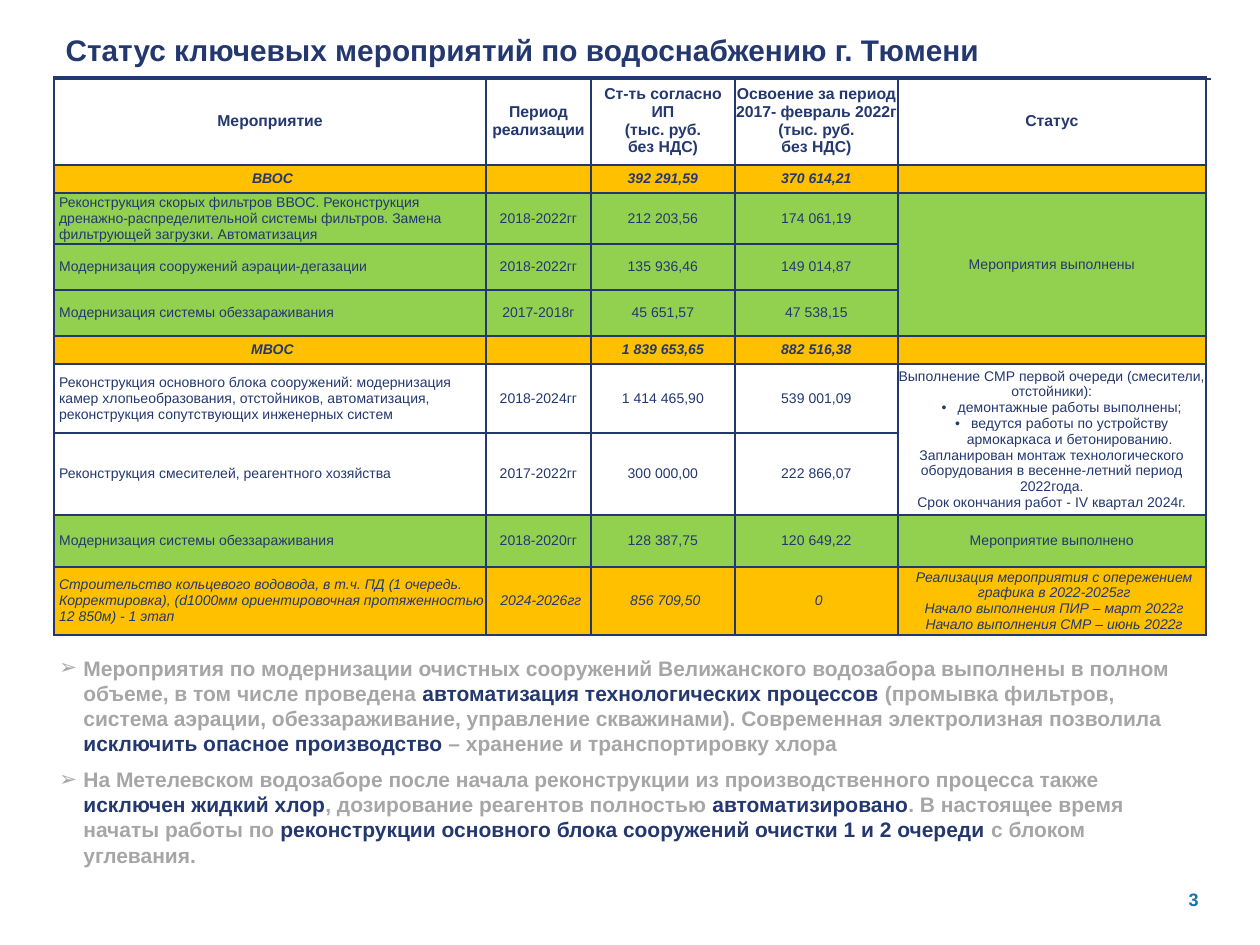
"""Build the slide on the status of key water supply measures in Tyumen."""
from lxml.etree import SubElement
from pptx import Presentation
from pptx.dml.color import RGBColor
from pptx.enum.shapes import MSO_CONNECTOR
from pptx.enum.text import MSO_ANCHOR, MSO_AUTO_SIZE, PP_ALIGN
from pptx.oxml import parse_xml
from pptx.oxml.ns import nsdecls, qn
from pptx.util import Emu, Pt

NAVY = RGBColor(0x24, 0x38, 0x70)
RULE_NAVY = RGBColor(0x23, 0x37, 0x72)
BLUE = RGBColor(0x10, 0x74, 0xB9)
GREY = RGBColor(0xA6, 0xA6, 0xA6)
GREEN = RGBColor(0x92, 0xD0, 0x50)
AMBER = RGBColor(0xFF, 0xC0, 0x00)
PX = 914400 / 126


def px(*lengths):
    return [Emu(round(length * PX)) for length in lengths]


def format_paragraph(paragraph, size, color, bold=False, italic=False, left=0, hang=0, bullet=None):
    properties = paragraph._p.get_or_add_pPr()
    margin, indent = px(left, -hang)
    properties.set("marL", str(margin))
    properties.set("indent", str(indent))
    if bullet:
        SubElement(properties, qn("a:buFont")).set("typeface", "Arial")
        SubElement(properties, qn("a:buChar")).set("char", bullet)
    font = paragraph.font
    font.name, font.size, font.bold, font.italic = "Arial", Pt(size), bold, italic
    font.color.rgb = color


prs = Presentation()
prs.slide_width, prs.slide_height = px(1260, 945)
slide = prs.slides.add_slide(prs.slide_layouts[5])
shapes = slide.shapes

heading = shapes.title
heading.left, heading.top, heading.width, heading.height = px(53, 29, 1067, 50)
heading_frame = heading.text_frame
heading_frame.text = "Статус ключевых мероприятий по водоснабжению г. Тюмени"
heading_frame.auto_size = MSO_AUTO_SIZE.NONE
heading_frame.vertical_anchor = MSO_ANCHOR.TOP
heading_line = heading_frame.paragraphs[0]
heading_line.alignment = PP_ALIGN.LEFT
heading_line.line_spacing = 0.9
format_paragraph(heading_line, 17, NAVY, bold=True)

rule = shapes.add_connector(MSO_CONNECTOR.STRAIGHT, *px(1211, 79, 53, 79))
rule.line.color.rgb = RULE_NAVY
rule.line.width = Pt(1.5)
SubElement(rule._element.spPr, qn("a:effectLst"))

page_box = shapes.add_textbox(*px(1120, 877, 91, 45))
page_box.text_frame.text = "3"
page_box.text_frame.word_wrap = True
page_box.text_frame.vertical_anchor = MSO_ANCHOR.MIDDLE
page_line = page_box.text_frame.paragraphs[0]
page_line.alignment = PP_ALIGN.RIGHT
format_paragraph(page_line, 10.3, BLUE, bold=True)

COLUMN_WIDTHS = [432, 105, 144, 163, 308]
HEAD = dict(size=9, bold=True)
GROUP = dict(size=8, bold=True, italic=True)
BODY = dict(size=8)
PLANNED = dict(size=8, italic=True)
MEASURES = [
    (88, None, HEAD, ["Мероприятие", "Период реализации", "Ст-ть согласно ИП\n(тыс. руб.\nбез НДС)",
                      "Освоение за период 2017- февраль 2022г (тыс. руб.\nбез НДС)", "Статус"]),
    (28, AMBER, GROUP, ["ВВОС", "", "392 291,59", "370 614,21", ""]),
    (51, GREEN, BODY, ["Реконструкция скорых фильтров ВВОС. Реконструкция дренажно-распределительной "
                       "системы фильтров. Замена фильтрующей загрузки. Автоматизация",
                       "2018-2022гг", "212 203,56", "174 061,19", "Мероприятия выполнены"]),
    (46, GREEN, BODY, ["Модернизация сооружений аэрации-дегазации",
                       "2018-2022гг", "135 936,46", "149 014,87", ""]),
    (46, GREEN, BODY, ["Модернизация системы обеззараживания",
                       "2017-2018г", "45 651,57", "47 538,15", ""]),
    (28, AMBER, GROUP, ["МВОС", "", "1 839 653,65", "882 516,38", ""]),
    (69, None, BODY, ["Реконструкция основного блока сооружений: модернизация камер хлопьеобразования, "
                      "отстойников, автоматизация, реконструкция сопутствующих инженерных систем",
                      "2018-2024гг", "1 414 465,90", "539 001,09",
                      "Выполнение СМР первой очереди (смесители, отстойники):\n"
                      "•демонтажные работы выполнены;\n"
                      "•ведутся работы по устройству армокаркаса и бетонированию.\n"
                      "Запланирован монтаж технологического оборудования в весенне-летний период 2022года.\n"
                      "Срок окончания работ - IV квартал 2024г."]),
    (82, None, BODY, ["Реконструкция смесителей, реагентного хозяйства",
                      "2017-2022гг", "300 000,00", "222 866,07", ""]),
    (52, GREEN, BODY, ["Модернизация системы обеззараживания",
                       "2018-2020гг", "128 387,75", "120 649,22", "Мероприятие выполнено"]),
    (68, AMBER, PLANNED, ["Строительство кольцевого водовода, в т.ч. ПД (1 очередь. Корректировка), "
                          "(d1000мм ориентировочная протяженностью 12 850м) - 1 этап",
                          "2024-2026гг", "856 709,50", "0",
                          "Реализация мероприятия с опережением графика в 2022-2025гг\n"
                          "Начало выполнения ПИР – март 2022г\nНачало выполнения СМР – июнь 2022г"]),
]
table_height = sum(measure[0] for measure in MEASURES)
measures = shapes.add_table(len(MEASURES), len(COLUMN_WIDTHS),
                            *px(54, 77, sum(COLUMN_WIDTHS), table_height)).table
measures.first_row = measures.horz_banding = False
for column, width in zip(measures.columns, px(*COLUMN_WIDTHS)):
    column.width = width

for row_index, (height, fill, style, texts) in enumerate(MEASURES):
    measures.rows[row_index].height = px(height)[0]
    for column_index, text in enumerate(texts):
        cell = measures.cell(row_index, column_index)
        cell.margin_left = cell.margin_right = cell.margin_top = cell.margin_bottom = 0
        cell.vertical_anchor = MSO_ANCHOR.MIDDLE
        cell.text = text
        for line in cell.text_frame.paragraphs:
            named = column_index == 0 and style in (BODY, PLANNED)
            line.alignment = PP_ALIGN.LEFT if named else PP_ALIGN.CENTER
            if line.text.startswith("•"):
                line.runs[0].text = line.text[1:]
                format_paragraph(line, color=NAVY, left=36, hang=16, bullet="•", **style)
            else:
                indented = style is PLANNED or (column_index == 0 and style is not HEAD)
                format_paragraph(line, color=NAVY, left=5 if indented else 0, **style)
            if not text:
                line._p.get_or_add_endParaRPr().set("sz", "800")
        cell_properties = cell._tc.get_or_add_tcPr()
        for side in ("lnL", "lnR", "lnT", "lnB"):
            cell_properties.append(parse_xml(
                f'<a:{side} {nsdecls("a")} w="12700"><a:solidFill><a:srgbClr val="{NAVY}"/>'
                f'</a:solidFill></a:{side}>'))
        if fill:
            cell.fill.solid()
            cell.fill.fore_color.rgb = fill
        else:
            cell.fill.background()

for first_row, last_row in ((2, 4), (6, 7)):
    measures.cell(first_row, 4).merge(measures.cell(last_row, 4))

CONCLUSIONS = [
    ["Мероприятия по модернизации очистных сооружений Велижанского водозабора выполнены в полном "
     "объеме, в том числе проведена ", "автоматизация технологических процессов ",
     "(промывка фильтров, система аэрации, обеззараживание, управление скважинами). "
     "Современная электролизная позволила ", "исключить опасное производство ",
     "– хранение и транспортировку хлора"],
    ["На Метелевском водозаборе после начала реконструкции из производственного процесса также ",
     "исключен жидкий хлор", ", дозирование реагентов полностью ", "автоматизировано",
     ". В настоящее время начаты работы по ",
     "реконструкции основного блока сооружений очистки 1 и 2 очереди ", "с блоком углевания."],
]
conclusions = shapes.add_textbox(*px(35, 649, 1181, 263)).text_frame
conclusions.word_wrap = True
for index, phrases in enumerate(CONCLUSIONS):
    conclusion = conclusions.add_paragraph() if index else conclusions.paragraphs[0]
    conclusion.space_after = Pt(6)
    format_paragraph(conclusion, 12, GREY, bold=True, left=36, hang=24, bullet="➢")
    for phrase_index, phrase in enumerate(phrases):
        run = conclusion.add_run()
        run.text = phrase
        if phrase_index % 2:
            run.font.color.rgb = NAVY

prs.save("out.pptx")
